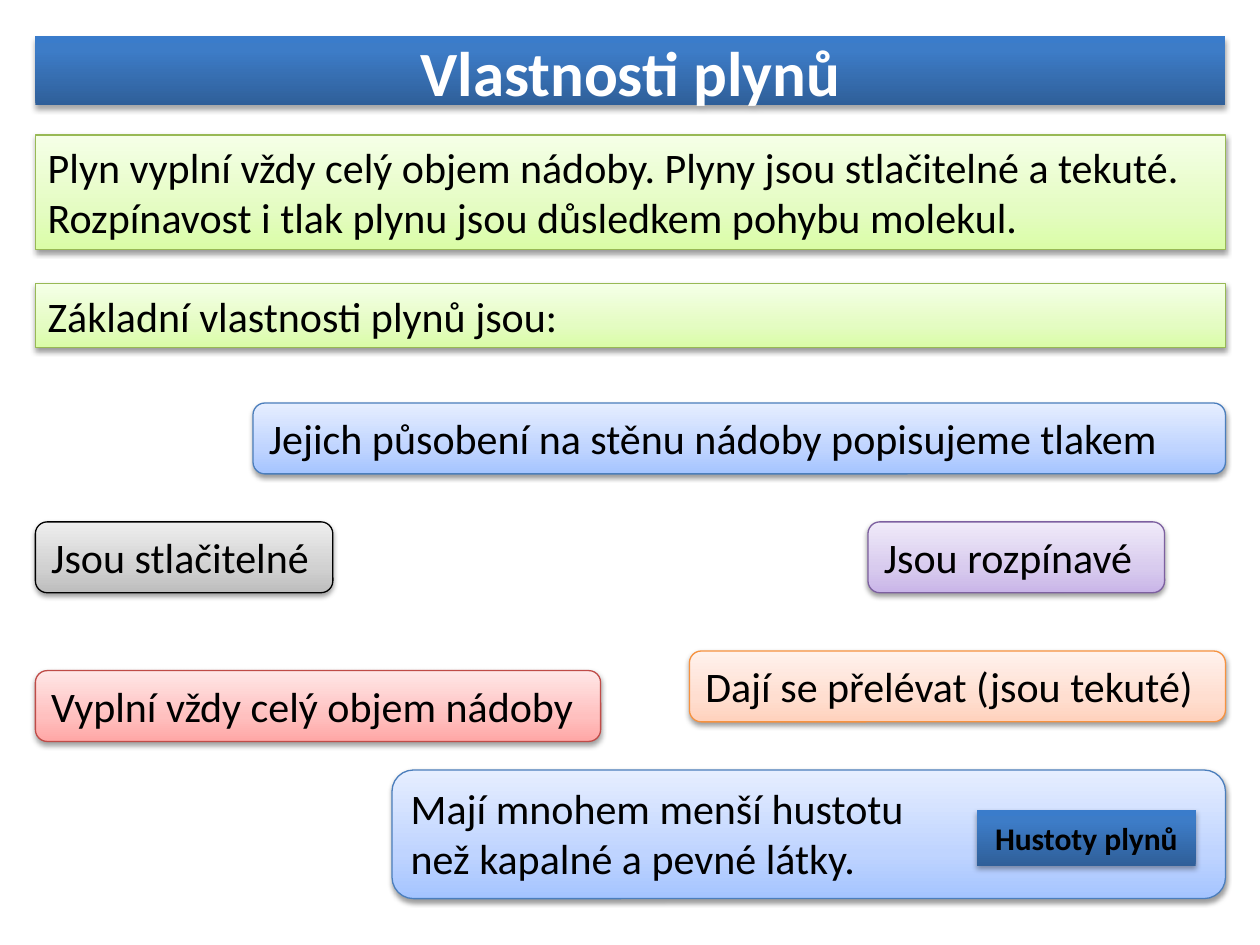
import pptx
import pptx.util
import pptx.dml.color
import pptx.enum.shapes
import pptx.enum.text
import pptx.oxml.ns
import lxml.etree

Pt = pptx.util.Pt
RGB = pptx.dml.color.RGBColor
SHAPE = pptx.enum.shapes.MSO_SHAPE
ALIGN = pptx.enum.text.PP_ALIGN
ANCHOR = pptx.enum.text.MSO_ANCHOR
qn = pptx.oxml.ns.qn

BLACK = RGB(0x00, 0x00, 0x00)
WHITE = RGB(0xFF, 0xFF, 0xFF)


def rgb(text):
    return RGB.from_string(text)


# Each theme: gradient colours from bottom to top, line colour
GREEN = ((rgb("DAFDA7"), rgb("E4FCC2"), rgb("F5FFE7")), rgb("98B955"))
BLUE = ((rgb("A4C4FF"), rgb("BFD4FF"), rgb("E6EEFF")), rgb("4B7EBC"))
RED = ((rgb("FFA6A5"), rgb("FFC0BF"), rgb("FFE7E7")), rgb("BF4C48"))
GREY = ((rgb("BDBDBD"), rgb("D1D1D1"), rgb("EEEEEE")), BLACK)
ORANGE = ((rgb("FFD2BD"), rgb("FFDED0"), rgb("FFF2ED")), rgb("F69240"))
PURPLE = ((rgb("C9B5E8"), rgb("D8CBEE"), rgb("F0EAF9")), rgb("7D60A0"))
STRONG_BLUE = ((rgb("2F5F99"), rgb("3D7CC7"), rgb("3A7CCB")), None)

LEFT, RIGHT = 20.2, 700.3
FULL = RIGHT - LEFT
ROW = 40.5

# text, theme, left, top, width, height
BANNERS = [
    ("Plyn vyplní vždy celý objem nádoby. Plyny jsou stlačitelné a tekuté. "
     "Rozpínavost i tlak plynu jsou důsledkem pohybu molekul.",
     GREEN, LEFT, 77.2, FULL, 65.4),
    ("Základní vlastnosti plynů jsou:", GREEN, LEFT, 162.2, FULL, 36.4),
]
PROPERTIES = [
    ("Mají mnohem menší hustotu\vnež kapalné a pevné látky.",
     BLUE, 224, 440, RIGHT - 224, 73.5),
    ("Vyplní vždy celý objem nádoby", RED, LEFT, 383.2, 323, ROW),
    ("Jsou stlačitelné", GREY, LEFT, 298.2, 170, ROW),
    ("Dají se přelévat (jsou tekuté)", ORANGE, 394, 372, RIGHT - 394, ROW),
    ("Jejich působení na stěnu nádoby popisujeme tlakem",
     BLUE, 144.6, 230.3, RIGHT - 144.6, ROW),
    ("Jsou rozpínavé", PURPLE, 496, 298.2, 169.5, ROW),
]
TITLE = ("Vlastnosti plynů", STRONG_BLUE, LEFT, 20.8, FULL, 39.5)
BUTTON = ("Hustoty plynů", STRONG_BLUE, 558.4, 463, 124.8, 31.6)


def paint_gradient(sp, colors, middle):
    """Three-stop gradient running from the bottom edge to the top."""
    sp.fill.gradient()
    grad = sp._element.spPr.find(qn("a:gradFill"))
    stops = grad.find(qn("a:gsLst"))
    for stop in list(stops):
        stops.remove(stop)
    for pos, color in zip((0, middle, 100), colors):
        stop = lxml.etree.SubElement(stops, qn("a:gs"), pos=str(pos * 1000))
        lxml.etree.SubElement(stop, qn("a:srgbClr"), val=str(color))
    grad.find(qn("a:lin")).set("ang", str(270 * 60000))


def drop_shadow(sp, distance, opacity):
    sp.shadow.inherit = False
    effects = sp._element.spPr.find(qn("a:effectLst"))
    shadow = lxml.etree.SubElement(
        effects, qn("a:outerShdw"), blurRad=str(Pt(3.1)),
        dist=str(Pt(distance)), dir=str(90 * 60000), rotWithShape="0")
    color = lxml.etree.SubElement(shadow, qn("a:srgbClr"), val=str(BLACK))
    lxml.etree.SubElement(color, qn("a:alpha"), val=str(opacity * 1000))


def add_box(s, kind, box, size=24, color=BLACK, heading=False):
    text, (colors, line), *place = box
    sp = s.shapes.add_shape(kind, *(Pt(round(v, 2)) for v in place))
    paint_gradient(sp, colors, 80 if heading else 35)
    if line is None:
        sp.line.fill.background()
    else:
        sp.line.color.rgb = line
        sp.line.width = Pt(0.75)
    drop_shadow(sp, *((1.8, 35) if heading else (1.6, 38)))

    tf = sp.text_frame
    tf.word_wrap = True
    tf.vertical_anchor = ANCHOR.MIDDLE if heading else ANCHOR.TOP
    tf.text = text
    p = tf.paragraphs[0]
    p.alignment = ALIGN.CENTER if heading else ALIGN.LEFT
    for r in p.runs:
        r.font.name = "Calibri"
        r.font.size = Pt(size)
        r.font.bold = heading
        r.font.color.rgb = color


def main():
    prs = pptx.Presentation()
    prs.slide_width, prs.slide_height = Pt(720), Pt(540)
    s = prs.slides.add_slide(prs.slide_layouts[6])
    add_box(s, SHAPE.RECTANGLE, TITLE, 36, WHITE, heading=True)
    for banner in BANNERS:
        add_box(s, SHAPE.RECTANGLE, banner)
    for prop in PROPERTIES:
        add_box(s, SHAPE.ROUNDED_RECTANGLE, prop)
    add_box(s, SHAPE.ACTION_BUTTON_CUSTOM, BUTTON, 18, heading=True)
    prs.save("out.pptx")


if __name__ == "__main__":
    main()
